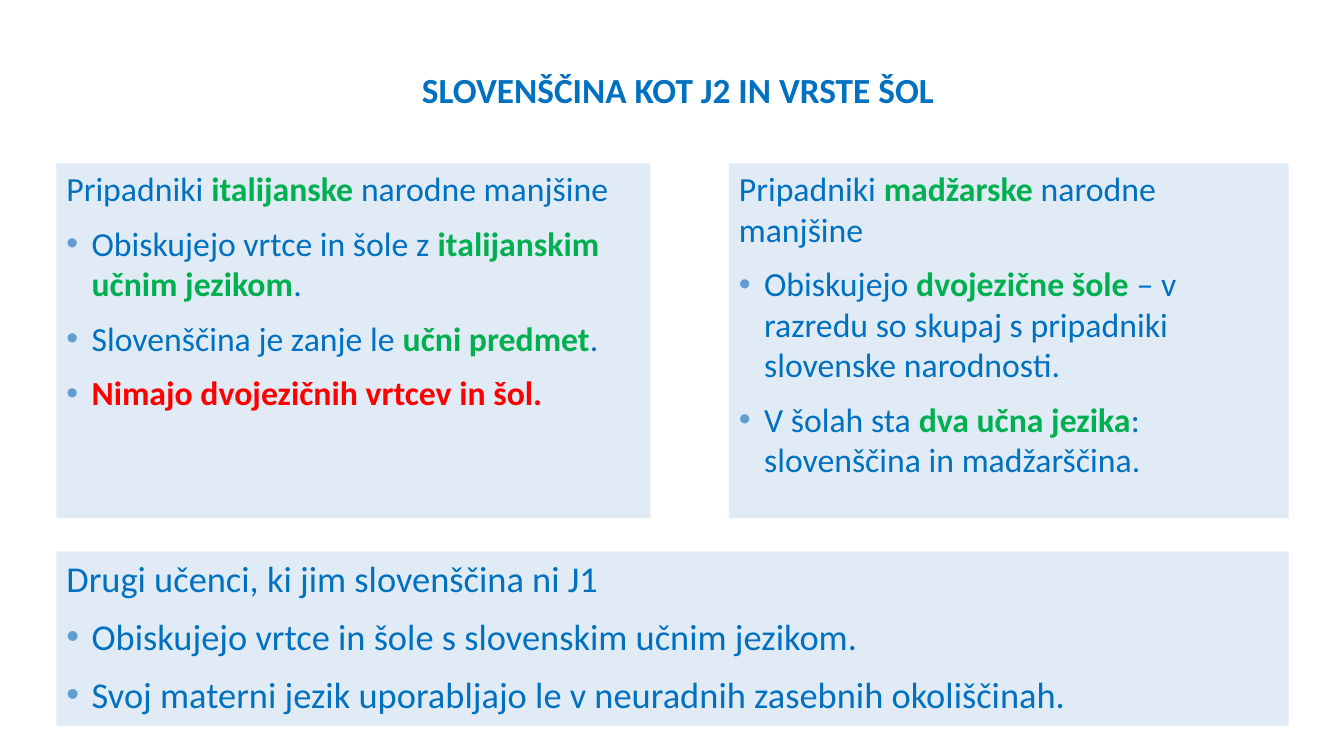
from lxml.etree import SubElement
from pptx import Presentation
from pptx.dml.color import RGBColor
from pptx.enum.shapes import MSO_SHAPE
from pptx.enum.text import MSO_ANCHOR, MSO_AUTO_SIZE, PP_ALIGN
from pptx.oxml.ns import qn
from pptx.util import Emu, Pt

EMU_PER_PX = 9144  # 100 px to the inch
BLUE, GREEN, RED = "0070C0", "00B050", "FF0000"
PANEL, BULLET = "E0EBF6", "629DD1"


def px(length):
    return Emu(length * EMU_PER_PX)


def rgb(color):
    return RGBColor.from_string(color)


class SlideBuilder:
    font_name = "Calibri"
    indent = 25

    def __init__(self, page):
        self.page = page

    def style(self, font, size, color=BLUE, bold=False):
        font.name = self.font_name
        font.size = Pt(size)
        font.bold = bold
        font.color.rgb = rgb(color)

    def place(self, shape, left, top, width, height):
        shape.left, shape.top = px(left), px(top)
        shape.width, shape.height = px(width), px(height)

    def title(self, text, bounds, size):
        title = self.page.shapes.title
        self.place(title, *bounds)
        frame = title.text_frame
        frame.auto_size = MSO_AUTO_SIZE.NONE
        frame.word_wrap = True
        frame.vertical_anchor = MSO_ANCHOR.MIDDLE
        frame.margin_left = frame.margin_right = px(20)
        frame.margin_top = frame.margin_bottom = px(20)
        para = frame.paragraphs[0]
        para.text = text
        para.alignment = PP_ALIGN.CENTER
        para.line_spacing = 0.9
        self.style(para.font, size, bold=True)

    def bullet(self, para):
        props = para._p.get_or_add_pPr()
        props.set("marL", str(px(self.indent)))
        props.set("indent", str(-px(self.indent)))
        color = SubElement(props, qn("a:buClr"))
        SubElement(color, qn("a:srgbClr")).set("val", BULLET)
        SubElement(props, qn("a:buFont")).set("typeface", "Arial")
        SubElement(props, qn("a:buChar")).set("char", "•")

    def panel(self, bounds, size, paragraphs):
        """Draw a filled panel: a heading paragraph, then bullets."""
        box = self.page.shapes.add_shape(MSO_SHAPE.RECTANGLE, *map(px, bounds))
        box.shadow.inherit = False
        box.fill.solid()
        box.fill.fore_color.rgb = rgb(PANEL)
        box.line.fill.background()
        frame = box.text_frame
        frame.word_wrap = True
        frame.vertical_anchor = MSO_ANCHOR.TOP
        for index, spans in enumerate(paragraphs):
            para = frame.add_paragraph() if index else frame.paragraphs[0]
            para.alignment = PP_ALIGN.LEFT
            if index:
                para.space_before = Pt(10)
                self.bullet(para)
            for text, color in spans:
                span = para.add_run()
                span.text = text
                font = para.font if len(spans) == 1 else span.font
                self.style(font, size, color, bold=color != BLUE)


def main():
    deck = Presentation()
    deck.slide_width, deck.slide_height = px(1333), px(750)
    builder = SlideBuilder(deck.slides.add_slide(deck.slide_layouts[5]))

    builder.title("SLOVENŠČINA KOT J2 IN VRSTE ŠOL", (250, 53, 845, 76), 25.2)

    # Italian minority
    builder.panel((56, 162, 589, 352), 24.1, [
        [("Pripadniki ", BLUE), ("italijanske", GREEN), (" narodne manjšine", BLUE)],
        [("Obiskujejo vrtce in šole z ", BLUE),
         ("italijanskim učnim jezikom", GREEN), (".", BLUE)],
        [("Slovenščina je zanje le ", BLUE), ("učni predmet", GREEN), (".", BLUE)],
        [("Nimajo dvojezičnih vrtcev in šol.", RED)],
    ])

    # Hungarian minority
    builder.panel((723, 162, 555, 352), 24.1, [
        [("Pripadniki ", BLUE), ("madžarske ", GREEN), ("narodne manjšine", BLUE)],
        [("Obiskujejo ", BLUE), ("dvojezične šole ", GREEN),
         ("– v razredu so skupaj s pripadniki slovenske narodnosti.", BLUE)],
        [("V šolah sta ", BLUE), ("dva učna jezika", GREEN),
         (": slovenščina in madžarščina.", BLUE)],
    ])

    # Other pupils
    builder.panel((56, 547, 1222, 173), 26, [
        [("Drugi učenci, ki jim slovenščina ni J1", BLUE)],
        [("Obiskujejo vrtce in šole s slovenskim učnim jezikom.", BLUE)],
        [("Svoj materni jezik uporabljajo le v neuradnih zasebnih okoliščinah.", BLUE)],
    ])

    deck.save("out.pptx")


if __name__ == "__main__":
    main()
